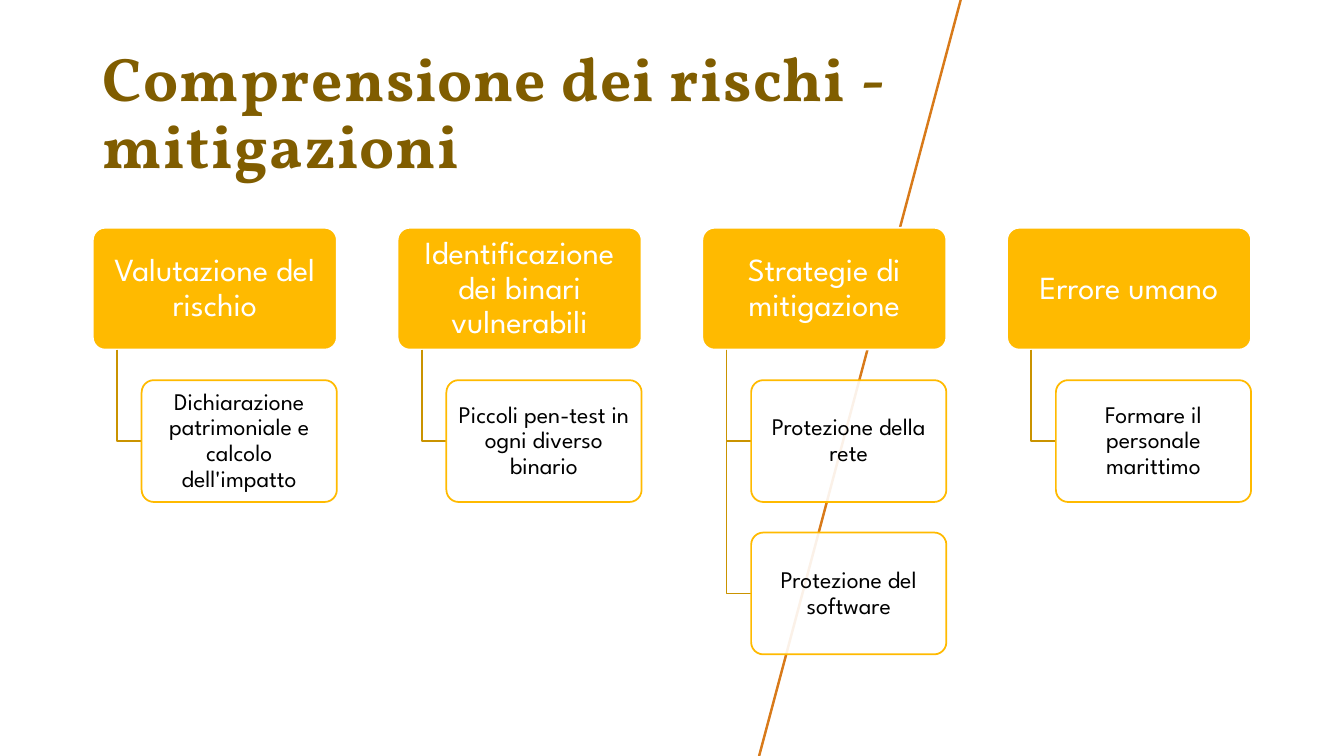
from pptx import Presentation
from pptx.dml.color import RGBColor
from pptx.enum.shapes import MSO_CONNECTOR, MSO_SHAPE
from pptx.enum.text import MSO_ANCHOR, PP_ALIGN
from pptx.oxml.ns import qn
from pptx.util import Cm, Pt
from lxml import etree

ROUND = MSO_SHAPE.ROUNDED_RECTANGLE
STRAIGHT = MSO_CONNECTOR.STRAIGHT
LEFT, CENTER = PP_ALIGN.LEFT, PP_ALIGN.CENTER
MIDDLE, BOTTOM = MSO_ANCHOR.MIDDLE, MSO_ANCHOR.BOTTOM

COLORS = {
    "title": "805D00",
    "gold": "FFBA00",
    "elbow": "CA9300",
    "slash": "D87A1A",
    "white": "FFFFFF",
    "black": "000000",
}
HUES = {name: RGBColor.from_string(code) for name, code in COLORS.items()}

COLUMNS = [
    ("Valutazione del rischio",
     ["Dichiarazione patrimoniale e calcolo dell'impatto"]),
    ("Identificazione dei binari vulnerabili",
     ["Piccoli pen-test in ogni diverso binario"]),
    ("Strategie di mitigazione",
     ["Protezione della rete", "Protezione del software"]),
    ("Errore umano", ["Formare il personale marittimo"]),
]


def write(shape, text, face, size, hue, align, anchor, inset):
    frame = shape.text_frame
    frame.text = text
    frame.word_wrap = True
    frame.vertical_anchor = anchor
    frame.margin_left = frame.margin_right = Cm(inset)
    frame.margin_top = frame.margin_bottom = Cm(inset)
    para = frame.paragraphs[0]
    para.alignment = align
    para.line_spacing = 0.9
    para.space_before = Pt(0)
    font = para.runs[0].font
    font.name = face
    font.size = Pt(size)
    font.color.rgb = HUES[hue]
    return para.runs[0]


def card(left, top, width, text, size, fill, line, ink, inset):
    box = slide.shapes.add_shape(ROUND, Cm(left), Cm(top), Cm(width), Cm(HIGH))
    box.shadow.inherit = False
    box.adjustments[0] = 0.1
    box.fill.solid()
    box.fill.fore_color.rgb = HUES[fill]
    box.line.color.rgb = HUES[line]
    box.line.width = Pt(1.25)
    write(box, text, "League Spartan", size, ink, CENTER, MIDDLE, inset)
    return box


deck = Presentation()
deck.slide_width, deck.slide_height = Cm(33.87), Cm(19.05)
slide = deck.slides.add_slide(deck.slide_layouts[5])

title = slide.shapes.title
title.left, title.top = Cm(2.46), Cm(1.02)
title.width, title.height = Cm(28.96), Cm(3.68)
run = write(title, "Comprensione dei rischi - mitigazioni", "Vollkorn", 44,
            "title", LEFT, BOTTOM, 0.13)
run.font.bold = True
run.font._element.set("spc", "100")

slash = slide.shapes.add_connector(
    STRAIGHT, Cm(19.13), Cm(19.05), Cm(24.21), Cm(0))
slash.line.color.rgb = HUES["slash"]
slash.line.width = Pt(1.75)
etree.SubElement(slash._element.spPr, qn("a:effectLst"))

X, Y, STEP = 2.34, 5.74, 7.68
WIDE, HIGH, ROW = 6.15, 3.07, 3.84
STEM, INDENT, SUB = 0.61, 1.23, 4.92

for col, (head, items) in enumerate(COLUMNS):
    left = X + col * STEP
    card(left, Y, WIDE, head, 23, "gold", "white", "white", 0.21)
    for row, item in enumerate(items, 1):
        top = Y + row * ROW
        mid = top + HIGH / 2
        path = slide.shapes.build_freeform(Cm(left + STEM), Cm(Y + HIGH))
        path.add_line_segments(
            [(Cm(left + STEM), Cm(mid)), (Cm(left + INDENT), Cm(mid))],
            close=False)
        elbow = path.convert_to_shape()
        elbow.shadow.inherit = False
        elbow.fill.background()
        elbow.line.color.rgb = HUES["elbow"]
        elbow.line.width = Pt(1.25)
        box = card(left + INDENT, top, SUB, item, 17,
                   "white", "gold", "black", 0.18)
        tint = box._element.spPr.find(qn("a:solidFill"))[0]
        etree.SubElement(tint, qn("a:alpha"), val="90000")

deck.save("out.pptx")
